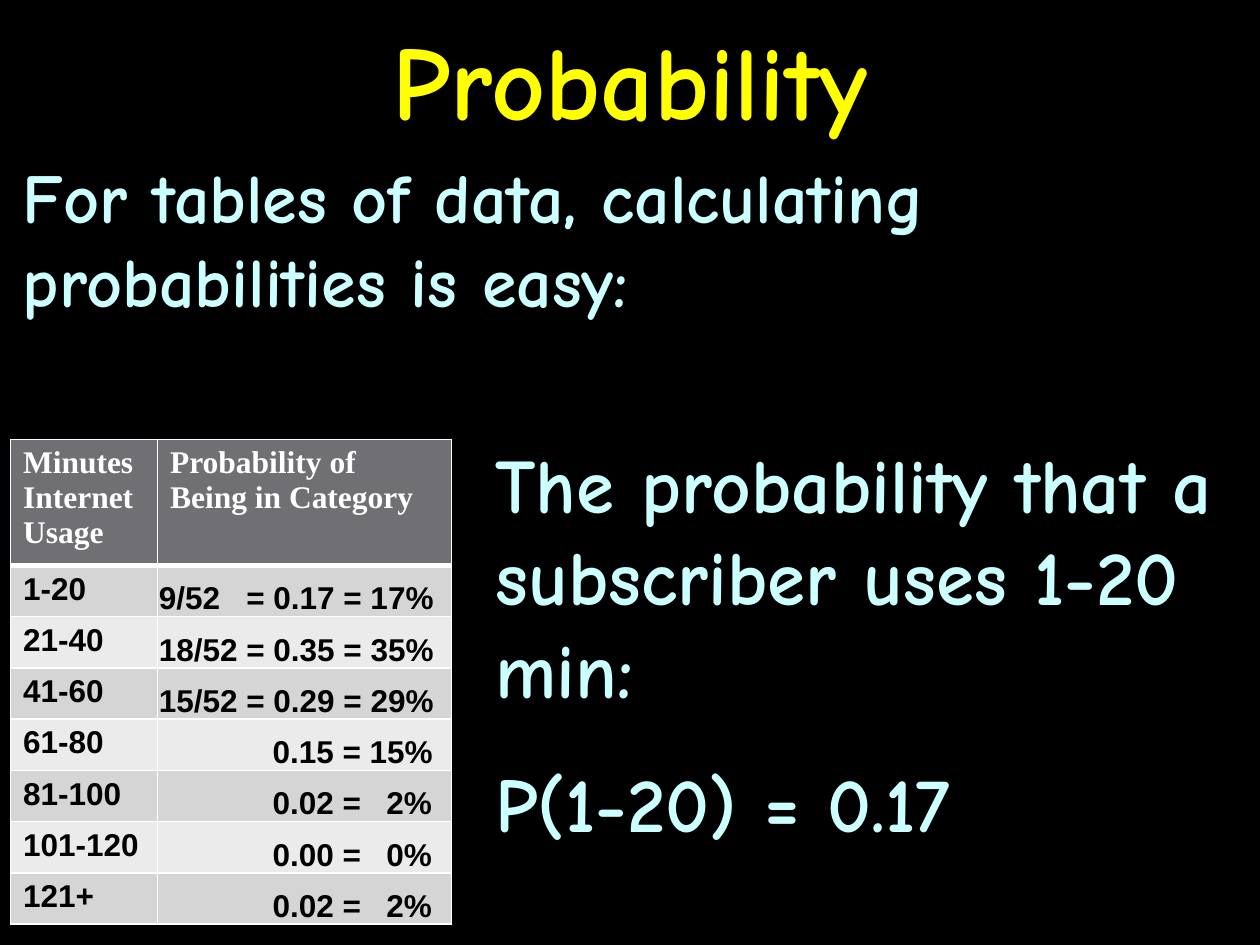
import pptx
import pptx.dml.color
import pptx.enum.text
import pptx.oxml.ns
import pptx.util
from lxml import etree

Pt = pptx.util.Pt
RGB = pptx.dml.color.RGBColor
ANCHOR = pptx.enum.text.MSO_ANCHOR
qn = pptx.oxml.ns.qn

BLACK = RGB(0, 0, 0)
WHITE = RGB(255, 255, 255)
YELLOW = RGB(0xFF, 0xFF, 0)
PALE_CYAN = RGB(0xCC, 0xFF, 0xFF)
HEADER_GREY = RGB(0x6F, 0x6F, 0x74)
BANDS = [RGB(0xD5, 0xD5, 0xD6), RGB(0xEB, 0xEB, 0xEC)]

HEADINGS = ["Minutes Internet Usage", "Probability of Being in Category"]
# minutes, probability, tab stops in points
ROWS = [
    ("1-20", "9/52\t= 0.17 = 17%", [50]),
    ("21-40", "18/52 = 0.35 = 35%", []),
    ("41-60", "15/52 = 0.29 = 29%", []),
    ("61-80", "\t0.15 = 15%", [65]),
    ("81-100", "\t0.02 =\t2%", [65, 130]),
    ("101-120", "\t0.00 =\t0%", [65, 130]),
    ("121+", "\t0.02 =\t2%", [65, 130]),
]


def format_runs(tf, font, size, color):
    for p in tf.paragraphs:
        for r in p.runs:
            r.font.name = font
            r.font.size = Pt(size)
            r.font.bold = True
            r.font.color.rgb = color


def add_text(s, box, lines, size, color):
    sp = s.shapes.add_textbox(*[Pt(v) for v in box])
    tf = sp.text_frame
    tf.word_wrap = True
    tf.text = "\n".join(lines)
    format_runs(tf, "Comic Neue", size, color)
    return tf


def set_borders(cell, top, bottom):
    tcPr = cell._tc.get_or_add_tcPr()
    widths = {"a:lnL": 1, "a:lnR": 1, "a:lnT": top, "a:lnB": bottom}
    for i, (tag, width) in enumerate(widths.items()):
        ln = etree.Element(qn(tag), w=str(Pt(width)))
        fill = etree.SubElement(ln, qn("a:solidFill"))
        etree.SubElement(fill, qn("a:srgbClr"), val=str(WHITE))
        tcPr.insert(i, ln)


def set_tab_stops(p, stops):
    if stops:
        tabs = etree.SubElement(p._p.get_or_add_pPr(), qn("a:tabLst"))
        for stop in stops:
            etree.SubElement(tabs, qn("a:tab"), pos=str(Pt(stop)), algn="l")


def fill_cell(cell, text, font, color, fill, top=1, bottom=1):
    cell.text_frame.text = text
    format_runs(cell.text_frame, font, 18, color)
    cell.fill.solid()
    cell.fill.fore_color.rgb = fill
    set_borders(cell, top, bottom)


def add_probability_table(s):
    shape = s.shapes.add_table(len(ROWS) + 1, 2, Pt(6), Pt(251), Pt(252), Pt(276.6))
    table = shape.table
    for column, width in zip(table.columns, [84, 168]):
        column.width = Pt(width)
    for i, row in enumerate(table.rows):
        row.height = Pt(29.3 if i else 71.5)
    for j, heading in enumerate(HEADINGS):
        fill_cell(table.cell(0, j), heading, "Times New Roman", WHITE, HEADER_GREY, bottom=3)
    for i, (minutes, probability, stops) in enumerate(ROWS, 1):
        band, top = BANDS[(i - 1) % 2], 3 if i == 1 else 1
        fill_cell(table.cell(i, 0), minutes, "Arial", BLACK, band, top)
        cell = table.cell(i, 1)
        fill_cell(cell, probability, "Arial", BLACK, band, top)
        cell.vertical_anchor = ANCHOR.BOTTOM
        cell.margin_left = cell.margin_right = cell.margin_top = Pt(0.75)
        cell.margin_bottom = 0
        set_tab_stops(cell.text_frame.paragraphs[0], stops)


def main():
    prs = pptx.Presentation()
    prs.slide_width, prs.slide_height = Pt(720), Pt(540)
    s = prs.slides.add_slide(prs.slide_layouts[6])
    s.background.fill.solid()
    s.background.fill.fore_color.rgb = BLACK

    intro = add_text(s, (6, 84, 708, 104.4),
                     ["For tables of data, calculating probabilities is easy:"], 40, PALE_CYAN)
    add_probability_table(s)
    example = add_text(s, (276, 246, 430.5, 244.8),
                       ["The probability that a subscriber uses 1-20 min:", "P(1-20) = 0.17"],
                       44, PALE_CYAN)
    example.paragraphs[1].space_before = Pt(24)
    for tf in (intro, example):
        tf.auto_size = pptx.enum.text.MSO_AUTO_SIZE.SHAPE_TO_FIT_TEXT

    title = add_text(s, (0, 0, 720, 90), ["Probability"], 60, YELLOW)
    title.vertical_anchor = ANCHOR.MIDDLE
    title.paragraphs[0].alignment = pptx.enum.text.PP_ALIGN.CENTER
    prs.save("out.pptx")


if __name__ == "__main__":
    main()
